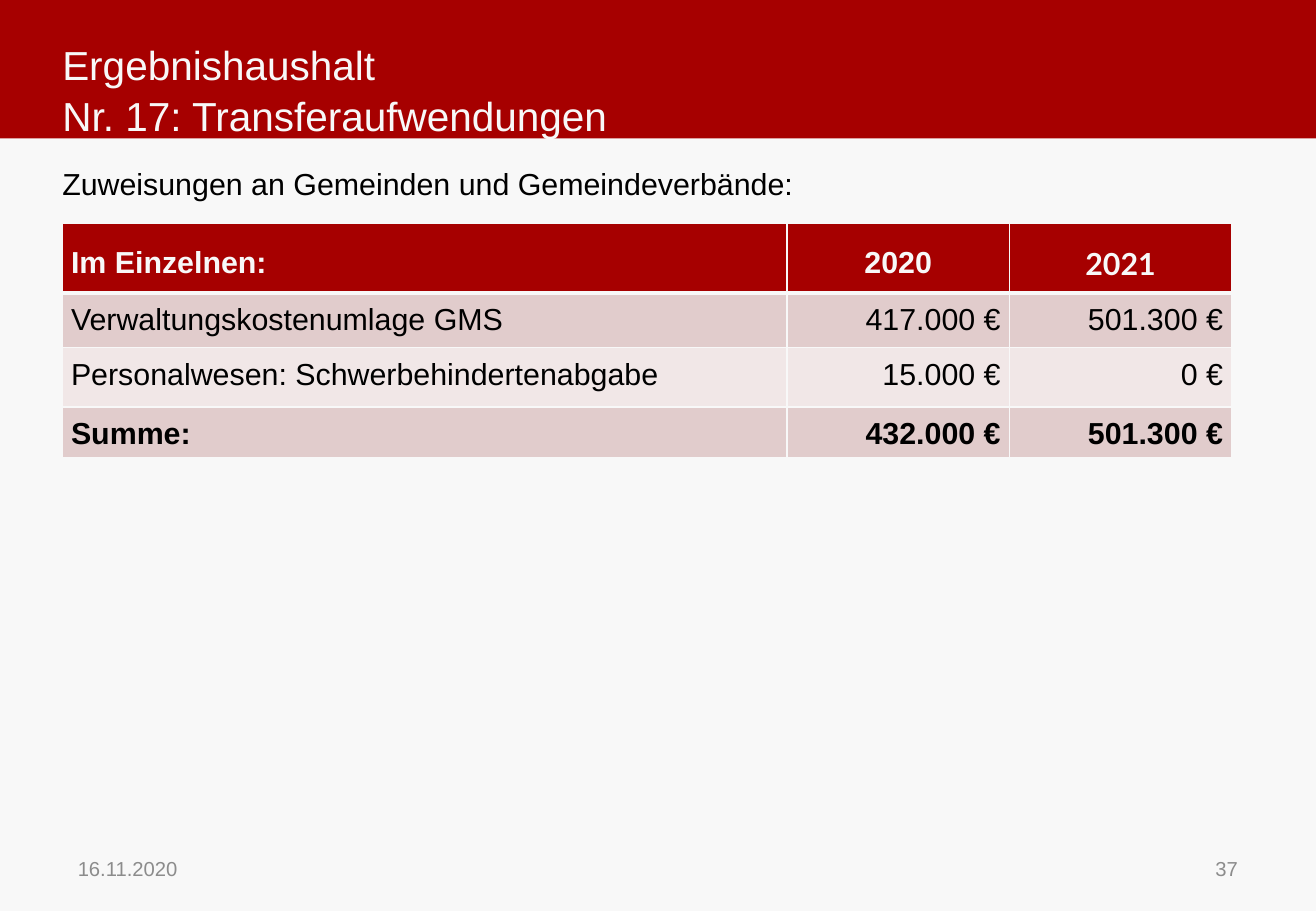
from lxml.etree import SubElement
from pptx import Presentation
from pptx.dml.color import RGBColor
from pptx.enum.shapes import MSO_SHAPE
from pptx.enum.text import MSO_ANCHOR, MSO_AUTO_SIZE, PP_ALIGN
from pptx.oxml.ns import qn
from pptx.util import Pt

RED, PAPER, BLACK, GREY = "A60000", "F8F8F8", "000000", "8C8C8C"
BANDS = ("E1CCCC", "F1E7E7")
WIDTH, HEIGHT = 780, 540
LEFT = 36.9


def paint(color_format, hex_color):
    color_format.rgb = RGBColor.from_string(hex_color)


def fill_solid(fill, hex_color):
    fill.solid()
    paint(fill.fore_color, hex_color)


def assign(target, values):
    for name, value in values.items():
        setattr(target, name, value)


class SlideBuilder:
    """Holds the current slide and the font shared by its elements."""

    def __init__(self, slide, font_name="Arial"):
        self.slide = slide
        self.font_name = font_name
        fill_solid(slide.background.fill, PAPER)

    def style(self, paragraph, color, font, layout):
        assign(paragraph, layout)
        assign(paragraph.font, {"name": self.font_name, **font})
        paint(paragraph.font.color, color)

    def banner(self, height, color):
        """Draw a full-width band behind the placeholders."""
        band = self.slide.shapes.add_shape(MSO_SHAPE.RECTANGLE, 0, 0, Pt(WIDTH), Pt(height))
        band.shadow.inherit = False
        fill_solid(band.fill, color)
        band.line.fill.background()
        self.slide.shapes.element.insert(2, band.element)

    def place(self, holder, box, wording, color, anchor, size, spacing=1.0):
        assign(holder, dict(zip(("left", "top", "width", "height"), map(Pt, box))))
        frame = holder.text_frame
        assign(frame, {"text": wording, "word_wrap": True, "auto_size": MSO_AUTO_SIZE.NONE,
                       "vertical_anchor": anchor, "margin_left": 0, "margin_right": 0,
                       "margin_top": 0, "margin_bottom": 0})
        paragraph = frame.paragraphs[0]
        properties = paragraph._p.get_or_add_pPr()
        assign_indent = {"marL": "0", "indent": "0"}
        for name, value in assign_indent.items():
            properties.set(name, value)
        SubElement(properties, qn("a:buNone"))
        self.style(paragraph, color, {"size": Pt(size)},
                   {"alignment": PP_ALIGN.LEFT, "space_before": Pt(0), "line_spacing": spacing})

    def footer(self, left, wording, alignment):
        box = self.slide.shapes.add_textbox(Pt(left), Pt(500.4), Pt(182), Pt(28.8))
        assign(box.text_frame, {"text": wording, "word_wrap": True,
                                "vertical_anchor": MSO_ANCHOR.MIDDLE})
        self.style(box.text_frame.paragraphs[0], GREY, {"size": Pt(12)}, {"alignment": alignment})

    def borders(self, cell, widths):
        properties = cell._tc.get_or_add_tcPr()
        for side, width in widths.items():
            line = SubElement(properties, qn(f"a:ln{side}"), w=str(Pt(width)))
            SubElement(SubElement(line, qn("a:solidFill")), qn("a:srgbClr"), val=PAPER)

    def cell(self, cell, wording, row, column, is_total):
        is_head = row == 0
        self.borders(cell, {"L": 1, "R": 1, "T": 3 if row == 1 else 1, "B": 3 if is_head else 1})
        fill_solid(cell.fill, RED if is_head else BANDS[(row - 1) % 2])
        assign(cell, {"text": wording, "margin_left": Pt(5.2), "margin_right": Pt(5.2),
                      "margin_top": 0, "margin_bottom": 0,
                      "vertical_anchor": MSO_ANCHOR.MIDDLE if is_head else MSO_ANCHOR.TOP})
        figures = PP_ALIGN.CENTER if is_head else PP_ALIGN.RIGHT
        font = {"size": Pt(18), "bold": is_head or is_total}
        if is_head and column == 2:
            font["name"] = "Lato"
        self.style(cell.text_frame.paragraphs[0], PAPER if is_head else BLACK, font,
                   {"alignment": figures if column else PP_ALIGN.LEFT, "line_spacing": 1.3})

    def table(self, top, widths, heights, rows):
        table = self.slide.shapes.add_table(len(rows), len(widths), Pt(LEFT), Pt(top),
                                            Pt(sum(widths)), Pt(sum(heights))).table
        for column, width in zip(table.columns, widths):
            column.width = Pt(width)
        for r, (height, entries) in enumerate(zip(heights, rows)):
            table.rows[r].height = Pt(height)
            for c, wording in enumerate(entries):
                self.cell(table.cell(r, c), wording, r, c, r == len(rows) - 1)


def main():
    deck = Presentation()
    assign(deck, {"slide_width": Pt(WIDTH), "slide_height": Pt(HEIGHT)})
    slide = deck.slides.add_slide(deck.slide_layouts[1])
    builder = SlideBuilder(slide)
    builder.banner(82, RED)
    builder.place(slide.shapes.title, (LEFT, 26, 599, 53.3),
                  "Ergebnishaushalt\vNr. 17: Transferaufwendungen",
                  PAPER, MSO_ANCHOR.MIDDLE, 24, 1.05)
    builder.place(slide.placeholders[1], (LEFT, 98, 708.5, 383.8),
                  "Zuweisungen an Gemeinden und Gemeindeverbände:",
                  BLACK, MSO_ANCHOR.TOP, 18)
    builder.table(132.6, (429.6, 131.8, 131.8), (41, 32.4, 35.3, 30.2), (
        ("Im Einzelnen:", "2020", "2021"),
        ("Verwaltungskostenumlage GMS", "417.000 €", "501.300 €"),
        ("Personalwesen: Schwerbehindertenabgabe", "15.000 €", "0 €"),
        ("Summe:", "432.000 €", "501.300 €"),
    ))
    builder.footer(39, "16.11.2020", PP_ALIGN.LEFT)
    builder.footer(558.7, "37", PP_ALIGN.RIGHT)
    deck.save("out.pptx")


if __name__ == "__main__":
    main()
